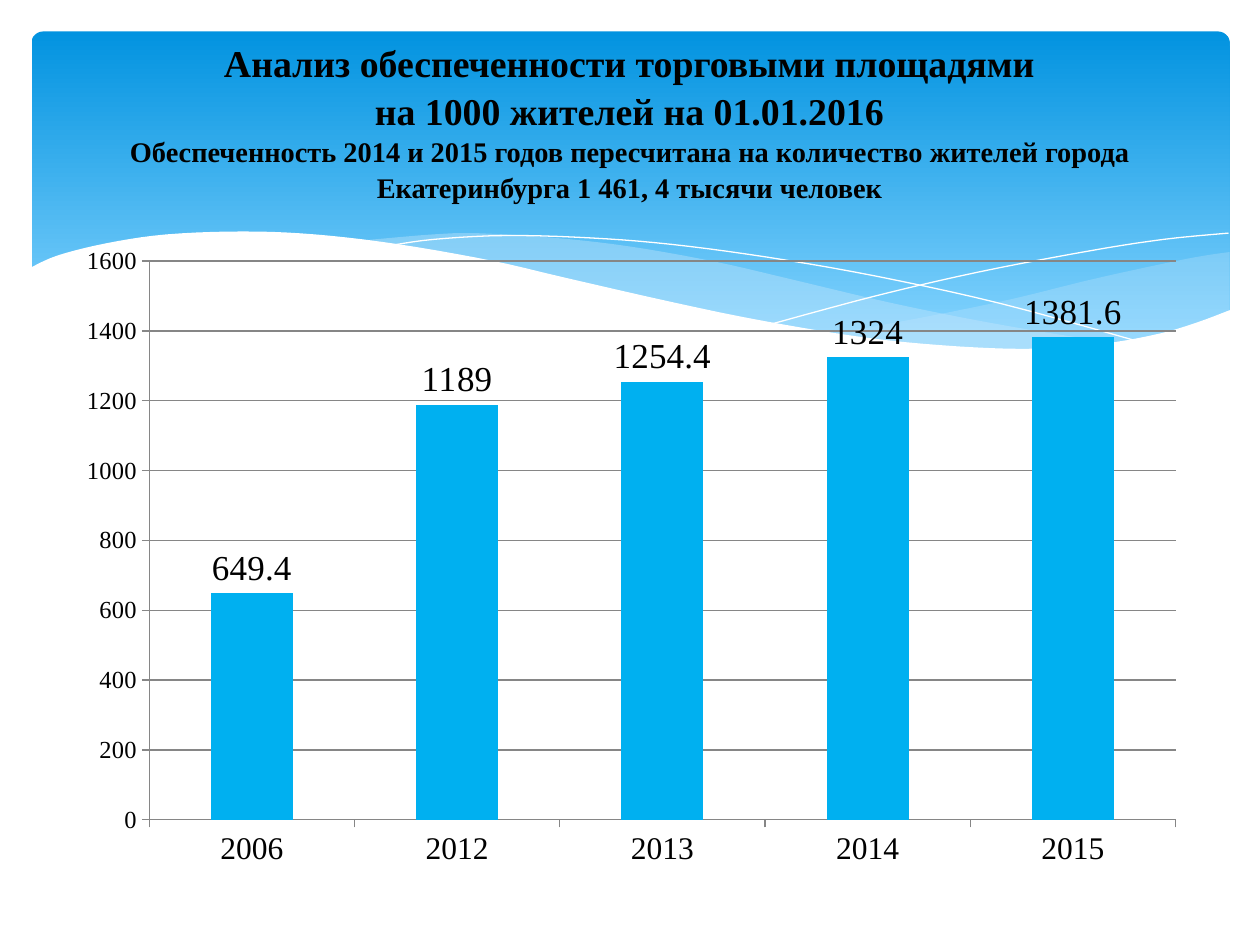
from lxml.etree import SubElement
from pptx import Presentation
from pptx.chart.data import CategoryChartData
from pptx.dml.color import RGBColor
from pptx.enum.chart import XL_CHART_TYPE as ChartType, XL_LABEL_POSITION as LabelPosition
from pptx.enum.chart import XL_TICK_MARK as TickMark
from pptx.enum.shapes import MSO_SHAPE as Shape
from pptx.enum.text import MSO_ANCHOR as Anchor, PP_ALIGN as Align
from pptx.oxml.ns import qn
from pptx.util import Pt

BLACK = RGBColor(0x00, 0x00, 0x00)
WHITE = RGBColor(0xFF, 0xFF, 0xFF)
HEADER_TOP = RGBColor(0x02, 0x93, 0xE0)
HEADER_BOTTOM = RGBColor(0x83, 0xD3, 0xFE)
PALE_BLUE = RGBColor(0xC6, 0xE7, 0xFC)
BAR_BLUE = RGBColor(0x00, 0xB0, 0xF0)
GRID_GRAY = RGBColor(0x86, 0x86, 0x86)
SERIF = "Times New Roman"

RIGHT_BAND_TOP = [(476, 190.8), (508, 185), (542, 178.5), (580, 170.5), (620, 160.6),
                  (652, 153.4), (683, 147), (702.7, 144)]
RIGHT_BAND_BOTTOM = [(702.7, 177.8), (683, 185), (657, 192.2), (628, 197.3),
                     (593, 199.6), (554, 199.3), (518, 196), (476, 190.8)]
LONG_BAND_TOP = [(206, 137.5), (248, 133.9), (274, 133.3), (318, 136), (361, 141),
                 (410, 149.8), (453, 159.8), (508, 172.8), (558, 183), (603, 190.8),
                 (643, 196.6)]
LONG_BAND_BOTTOM = [(643, 196.6), (611, 199.4), (573, 200), (530, 198), (479, 191.5),
                    (420, 181.4), (382, 172.8), (323, 159.8), (276, 149), (233, 141),
                    (206, 137.5)]
FALLING_LINE = [(222.5, 140.4), (248, 136.8), (289, 134.6), (338, 136), (384, 139.7),
                (438, 146.9), (500, 157.7), (572, 173.5), (653, 195.8)]
RISING_LINE = [(441.4, 185), (500, 169.2), (559, 155.5), (623, 143.3), (665, 136.8),
               (702, 133.2)]
WHITE_WAVE = [(16.6, 153.4), (33, 146), (61, 139), (95, 134), (139, 132.3), (180, 134),
              (227, 139.5), (281, 149), (322, 158.5), (381, 172), (434, 183),
              (495, 193), (548, 198), (592, 199.3), (630, 196.5), (662, 190.8),
              (684, 184.3), (703.4, 177)]
WHITE_BASE = [(703.4, 237), (16.6, 237)]


def smooth(knots, steps=5):
    """Return points of a Catmull-Rom curve through the knots."""
    padded = [knots[0], *knots, knots[-1]]
    points = [knots[0]]
    for a, b, c, d in zip(padded, padded[1:], padded[2:], padded[3:]):
        for step in range(1, steps + 1):
            t = step / steps
            points.append(tuple(
                (2 * q + (r - p) * t + (2 * p - 5 * q + 4 * r - s) * t ** 2
                 + (3 * q - p - 3 * r + s) * t ** 3) / 2
                for p, q, r, s in zip(a, b, c, d)))
    return points


def add_outline(page, points, fill=None, opacity=100, line=None):
    """Draw a closed area when a fill is given, otherwise an open line."""
    corners = [(Pt(x), Pt(y)) for x, y in points]
    builder = page.shapes.build_freeform(*corners[0])
    builder.add_line_segments(corners[1:], close=fill is not None)
    outline = builder.convert_to_shape()
    outline.shadow.inherit = False
    if fill is None:
        outline.fill.background()
    else:
        outline.fill.solid()
        outline.fill.fore_color.rgb = fill
        if opacity < 100:
            color = outline.fill._xPr.find(qn("a:solidFill"))[0]
            SubElement(color, qn("a:alpha"), val=str(opacity * 1000))
    if line is None:
        outline.line.fill.background()
    else:
        outline.line.color.rgb = line
        outline.line.width = Pt(0)


def add_header(page):
    header = page.shapes.add_shape(Shape.ROUNDED_RECTANGLE, Pt(18), Pt(18), Pt(684.7), Pt(194.4))
    header.adjustments[0] = 0.034
    header.shadow.inherit = False
    header.line.fill.background()
    header.fill.gradient()
    header.fill.gradient_angle = 270
    stops = header.fill.gradient_stops
    for stop, color, position in zip(stops, (HEADER_TOP, HEADER_BOTTOM), (0, 0.9)):
        stop.color.rgb = color
        stop.position = position


def add_waves(page):
    add_outline(page, smooth(RIGHT_BAND_TOP) + smooth(RIGHT_BAND_BOTTOM), fill=PALE_BLUE, opacity=29)
    add_outline(page, smooth(LONG_BAND_TOP) + smooth(LONG_BAND_BOTTOM), fill=PALE_BLUE, opacity=40)
    for knots in (FALLING_LINE, RISING_LINE):
        add_outline(page, smooth(knots), line=WHITE)
    add_outline(page, smooth(WHITE_WAVE) + WHITE_BASE, fill=WHITE)


def set_font(font, size, name=SERIF, bold=False):
    font.size = Pt(size)
    font.name = name
    font.bold = bold
    font.color.rgb = BLACK


def add_span(para, text, **font_format):
    span = para.add_run()
    span.text = text
    set_font(span.font, **font_format)


def add_title(page):
    box = page.shapes.add_textbox(Pt(25.2), Pt(21.6), Pt(668.9), Pt(95))
    frame = box.text_frame
    frame.word_wrap = True
    frame.vertical_anchor = Anchor.MIDDLE
    para = frame.paragraphs[0]
    para.alignment = Align.CENTER
    para.line_spacing = 1.05
    for line in ("Анализ обеспеченности торговыми площадями",
                 "на 1000 жителей на 01.01.2016"):
        add_span(para, line, size=21.6, bold=True)
        para.add_line_break()
    add_span(para, "Обеспеченность 2014 и 2015 годов пересчитана на количество жителей "
             "города Екатеринбурга 1 461, 4 тысячи человек", size=16.2, bold=True)


def style_axis(axis, size):
    axis.major_tick_mark = TickMark.OUTSIDE
    axis.minor_tick_mark = TickMark.NONE
    axis.format.line.color.rgb = GRID_GRAY
    axis.format.line.width = Pt(0.75)
    set_font(axis.tick_labels.font, size)


def add_supply_chart(page):
    data = CategoryChartData()
    data.categories = ["2006", "2012", "2013", "2014", "2015"]
    data.add_series("Series 1", (649.4, 1189, 1254.4, 1324, 1381.6))
    chart = page.shapes.add_chart(ChartType.COLUMN_CLUSTERED, Pt(36.7), Pt(133.9),
                                  Pt(648), Pt(368.6), data).chart
    chart.has_title = False
    chart.has_legend = False
    set_font(chart.font, 18, name="Calibri")

    style_axis(chart.category_axis, 18)
    values = chart.value_axis
    style_axis(values, 14)
    values.minimum_scale, values.maximum_scale, values.major_unit = 0, 1600, 200
    values.has_major_gridlines = True
    values.major_gridlines.format.line.color.rgb = GRID_GRAY
    values.major_gridlines.format.line.width = Pt(0.75)

    plot = chart.plots[0]
    plot.vary_by_categories = False
    plot.gap_width = 150
    bars = plot.series[0]
    bars.format.fill.solid()
    bars.format.fill.fore_color.rgb = BAR_BLUE
    labels = bars.data_labels
    labels.show_value = True
    labels.position = LabelPosition.OUTSIDE_END
    set_font(labels.font, 20)


def main():
    deck = Presentation()
    deck.slide_width, deck.slide_height = Pt(720), Pt(540)
    page = deck.slides.add_slide(deck.slide_layouts[6])
    add_header(page)
    add_waves(page)
    add_supply_chart(page)
    add_title(page)
    deck.save("out.pptx")


if __name__ == "__main__":
    main()
